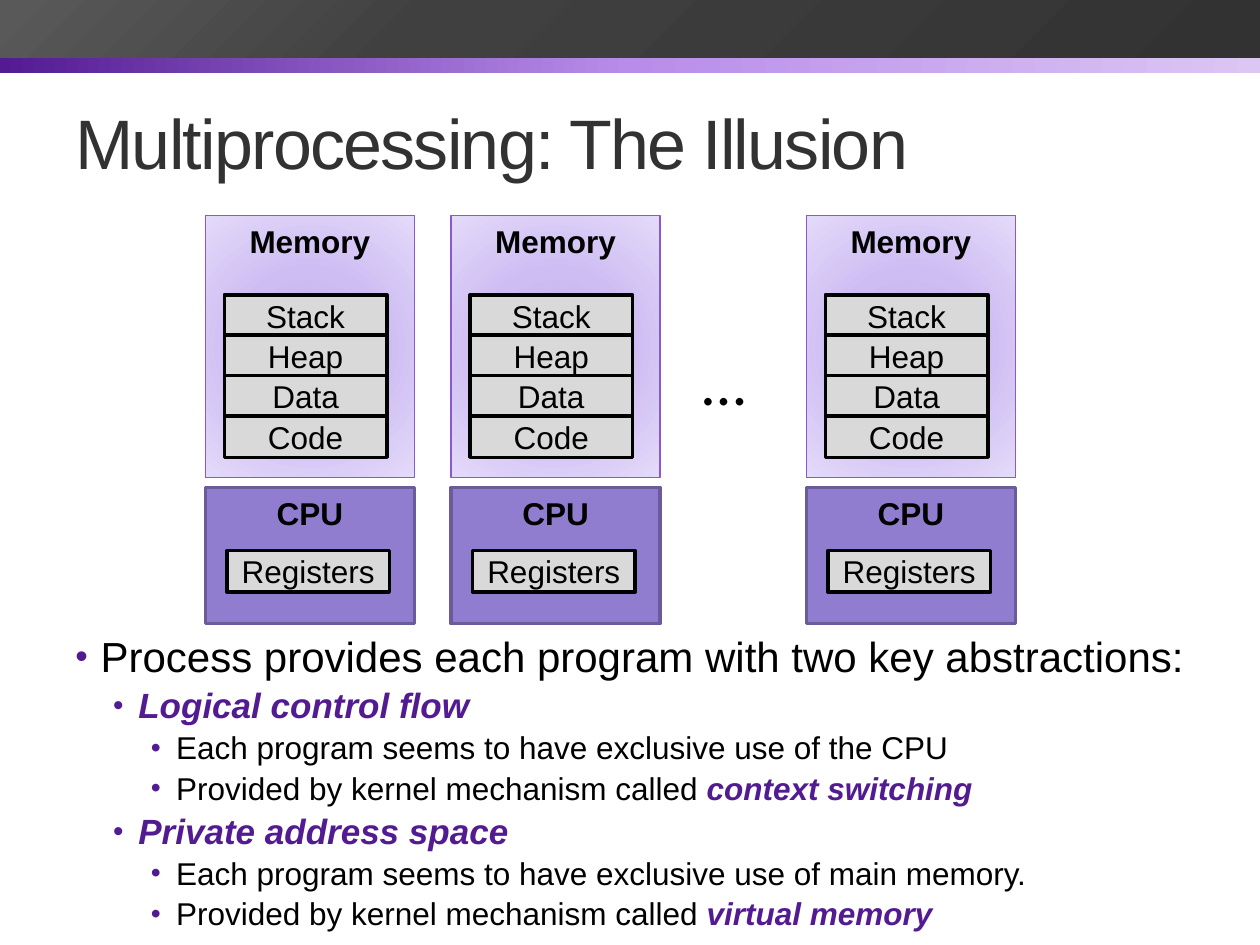
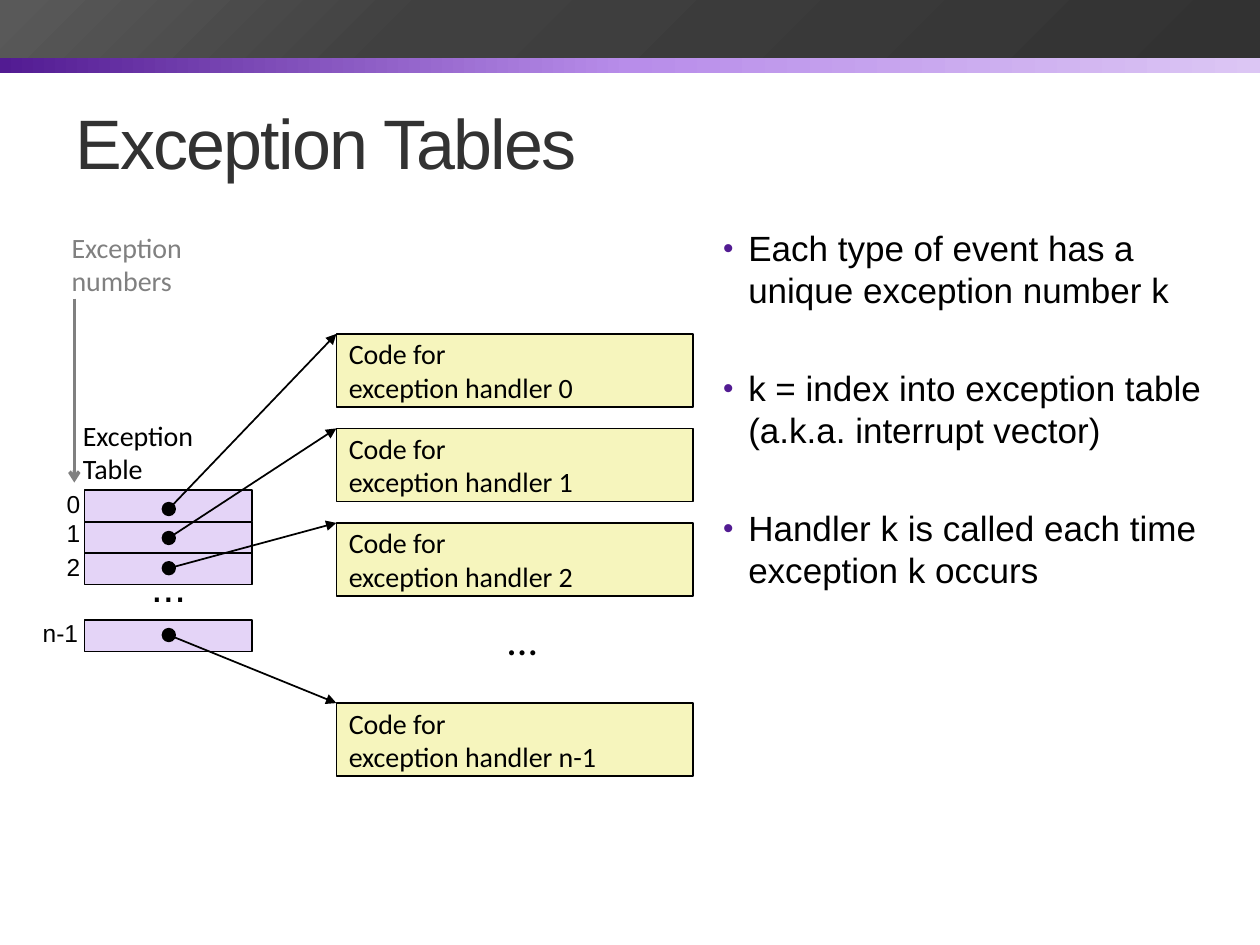
from lxml.etree import SubElement
from pptx import Presentation
from pptx.dml.color import RGBColor
from pptx.enum.shapes import MSO_CONNECTOR, MSO_SHAPE
from pptx.enum.text import MSO_ANCHOR, MSO_AUTO_SIZE, PP_ALIGN
from pptx.oxml import parse_xml
from pptx.oxml.ns import nsdecls, qn
from pptx.util import Inches, Pt

BLACK, PURPLE, TITLE_INK, GREY = "000000", "521B92", "323232", "808080"
CPU_FILL, CPU_EDGE, MEMORY_EDGE = "917DD0", "6B5C99", "8B58D2"
SEGMENT_FILL, ENTRY_FILL, HANDLER_FILL = "D9D9D9", "E4D4F7", "F6F5BD"

STRIPE_STOPS = [(0, PURPLE), (50, "B88DEA"), (100, "DCC6F4")]
BAND_STOPS = [(0, "323232"), (66, "404040"), (99, "595959")]
MEMORY_STOPS = [(0, "BFB0E2"), (45, "CEBDF3"), (100, "E4DAF9")]

# Outline level: indent (in), size (pt), space before (pt), bullet size (%)
LEVELS = [(0.2, 24, 4.8, 85), (0.5, 20, 4, 85), (0.8, 18, 3.6, 90)]

# (level, plain words, emphasised words)
ABSTRACTIONS = [
    (0, "Process provides each program with two key abstractions:", ""),
    (1, "", "Logical control flow"),
    (2, "Each program seems to have exclusive use of the CPU", ""),
    (2, "Provided by kernel mechanism called ", "context switching"),
    (1, "", "Private address space"),
    (2, "Each program seems to have exclusive use of main memory.", ""),
    (2, "Provided by kernel mechanism called ", "virtual memory"),
]
PROCESS_LEFTS = [1.63, 3.58, 6.4]
SEGMENTS = ["Stack", "Heap", "Data", "Code"]

EVENT_NOTES = [
    "Each type of event has a \nunique exception number k",
    "k = index into exception table \n(a.k.a. interrupt vector)",
    "Handler k is called each time \nexception k occurs",
]
# number, its left, top and width, then top of entry, dot and handler
EXCEPTIONS = [
    ("0", 0.43, 3.83, 0.31, 3.89, 3.99, 2.65),
    ("1", 0.43, 4.06, 0.31, 4.14, 4.22, 3.4),
    ("2", 0.43, 4.33, 0.31, 4.39, 4.46, 4.15),
    ("n-1", 0.24, 4.86, 0.48, 4.92, 4.99, 5.58),
]
ENTRY_LEFT, ENTRY_WIDTH, ENTRY_HEIGHT = 0.67, 1.33, 0.25
DOT_LEFT, DOT_SIZE = 1.29, 0.1
HANDLER_LEFT, HANDLER_WIDTH, HANDLER_HEIGHT = 2.67, 2.83, 0.58


def rgb(color):
    return RGBColor.from_string(color)


def box_inches(*lengths):
    return [Inches(length) for length in lengths]


def write(frame, paragraphs, size=18, font="Arial", color=BLACK, bold=False,
          align=PP_ALIGN.LEFT, anchor=MSO_ANCHOR.TOP, wrap=True):
    """Fill a text frame with one paragraph for each string."""
    frame.word_wrap = wrap
    frame.vertical_anchor = anchor
    for index, words in enumerate(paragraphs):
        paragraph = frame.paragraphs[0] if index == 0 else frame.add_paragraph()
        paragraph.alignment = align
        add_run(paragraph, words, size=size, font=font, color=color, bold=bold)


def add_run(paragraph, words, size=18, font="Arial", color=BLACK,
            bold=False, italic=False):
    for index, line in enumerate(words.split("\n")):
        if index:
            paragraph.add_line_break()
        run = paragraph.add_run()
        run.text = line
        run.font.size, run.font.name = Pt(size), font
        run.font.bold, run.font.italic = bold, italic
        run.font.color.rgb = rgb(color)


def add_bullet(paragraph, indent, percent):
    properties = paragraph._p.get_or_add_pPr()
    properties.set("marL", str(Inches(indent)))
    properties.set("indent", str(Inches(-0.2)))
    color = SubElement(properties, qn("a:buClr"))
    SubElement(color, qn("a:srgbClr"), val=PURPLE)
    SubElement(properties, qn("a:buSzPct"), val=str(percent * 1000))
    SubElement(properties, qn("a:buFont"), typeface="Arial")
    SubElement(properties, qn("a:buChar"), char="•")


def add_label(slide, box, paragraphs, grow=True, **style):
    label = slide.shapes.add_textbox(*box_inches(*box))
    write(label.text_frame, paragraphs, **style)
    if grow:
        label.text_frame.auto_size = MSO_AUTO_SIZE.SHAPE_TO_FIT_TEXT
    return label


def add_block(slide, box, fill=None, edge=None, weight=1,
              kind=MSO_SHAPE.RECTANGLE, paragraphs=(), **style):
    block = slide.shapes.add_shape(kind, *box_inches(*box))
    block.shadow.inherit = False
    if fill:
        block.fill.solid()
        block.fill.fore_color.rgb = rgb(fill)
    if edge:
        block.line.color.rgb = rgb(edge)
        block.line.width = Pt(weight)
    else:
        block.line.fill.background()
    if paragraphs:
        write(block.text_frame, paragraphs, **style)
    return block


def fill_gradient(shape, stops, angle=None):
    """Linear at the angle, or circular from the centre without one."""
    direction = (
        '<a:path path="circle"><a:fillToRect l="50000" t="50000" r="50000" b="50000"/></a:path>'
        if angle is None else f'<a:lin ang="{angle * 60000}" scaled="0"/>')
    marks = "".join(f'<a:gs pos="{place * 1000}"><a:srgbClr val="{color}"/></a:gs>'
                    for place, color in stops)
    gradient = parse_xml(f'<a:gradFill {nsdecls("a")} rotWithShape="1">'
                         f'<a:gsLst>{marks}</a:gsLst>{direction}</a:gradFill>')
    shape.fill.background()
    properties = shape._element.spPr
    properties.replace(properties.find(qn("a:noFill")), gradient)


def add_arrow(slide, start, end, color=BLACK, weight=1, head="triangle"):
    arrow = slide.shapes.add_connector(MSO_CONNECTOR.STRAIGHT, *box_inches(*start, *end))
    arrow.line.color.rgb = rgb(color)
    arrow.line.width = Pt(weight)
    SubElement(arrow.line._get_or_add_ln(), qn("a:tailEnd"), type=head)
    SubElement(arrow._element.spPr, qn("a:effectLst"))


def start_slide(deck, title):
    slide = deck.slides.add_slide(deck.slide_layouts[6])
    fill_gradient(add_block(slide, (0, 0.24, 10, 0.34)), STRIPE_STOPS, 0)
    fill_gradient(add_block(slide, (0, 0, 10, 0.46)), BAND_STOPS, 225)
    heading = add_label(slide, (0.5, 0.58, 9, 1.08), [title], grow=False, size=40,
                        color=TITLE_INK, anchor=MSO_ANCHOR.MIDDLE)
    run = heading.text_frame.paragraphs[0].runs[0]
    run._r.get_or_add_rPr().set("spc", "-100")
    return slide


def add_process(slide, left):
    heading = dict(bold=True, align=PP_ALIGN.CENTER)
    part = dict(fill=SEGMENT_FILL, edge=BLACK, weight=2,
                align=PP_ALIGN.CENTER, anchor=MSO_ANCHOR.MIDDLE)
    add_block(slide, (left, 3.87, 1.66, 1.08), CPU_FILL, CPU_EDGE, 2.08,
              paragraphs=["CPU"], **heading)
    add_block(slide, (left + 0.17, 4.37, 1.29, 0.33), paragraphs=["Registers"], **part)
    memory = add_block(slide, (left, 1.71, 1.66, 2.08), edge=MEMORY_EDGE, weight=0.75,
                       paragraphs=["Memory"], **heading)
    fill_gradient(memory, MEMORY_STOPS)
    for row, segment in enumerate(SEGMENTS):
        add_block(slide, (left + 0.15, 2.34 + row * 0.32, 1.29, 0.33),
                  paragraphs=[segment], **part)


def build_illusion(deck):
    slide = start_slide(deck, "Multiprocessing: The Illusion")
    outline = add_label(slide, (0.5, 5, 9, 2.5), [], grow=False).text_frame
    for index, (level, plain, emphasis) in enumerate(ABSTRACTIONS):
        indent, size, before, percent = LEVELS[level]
        paragraph = outline.paragraphs[0] if index == 0 else outline.add_paragraph()
        paragraph.level = level
        paragraph.line_spacing = 0.9
        paragraph.space_before = Pt(before)
        add_bullet(paragraph, indent, percent)
        if plain:
            add_run(paragraph, plain, size=size)
        if emphasis:
            add_run(paragraph, emphasis, size=size, color=PURPLE, bold=True, italic=True)
    for left in PROCESS_LEFTS:
        add_process(slide, left)
    add_label(slide, (5.48, 2.67, 0.62, 0.71), ["…"], size=36, font="Calibri")


def build_exception_tables(deck):
    slide = start_slide(deck, "Exception Tables")
    middle = dict(anchor=MSO_ANCHOR.MIDDLE, wrap=False)
    calibri = dict(font="Calibri", size=16)

    for number, left, top, width, entry_top, dot_top, handler_top in EXCEPTIONS:
        add_block(slide, (ENTRY_LEFT, entry_top, ENTRY_WIDTH, ENTRY_HEIGHT),
                  ENTRY_FILL, BLACK)
        add_label(slide, (left, top, width, 0.33), [number], size=14, **middle)
        add_block(slide, (HANDLER_LEFT, handler_top, HANDLER_WIDTH, HANDLER_HEIGHT),
                  HANDLER_FILL, BLACK, 0.75, anchor=MSO_ANCHOR.MIDDLE,
                  paragraphs=["Code for", f"exception handler {number}"], **calibri)
    for *_, dot_top, handler_top in EXCEPTIONS:
        add_block(slide, (DOT_LEFT, dot_top, DOT_SIZE, DOT_SIZE), BLACK, BLACK,
                  kind=MSO_SHAPE.OVAL)
        add_arrow(slide, (DOT_LEFT + DOT_SIZE / 2, dot_top + DOT_SIZE / 2),
                  (HANDLER_LEFT, handler_top))

    add_label(slide, (1.1, 4.4, 0.48, 0.5), ["..."], size=24, **middle)
    add_label(slide, (3.92, 4.82, 0.45, 0.5), ["..."], size=24, font="Calibri", **middle)
    add_label(slide, (0.56, 3.27, 1.2, 0.64), ["Exception", "Table"], **calibri)
    add_label(slide, (0.47, 1.78, 1.2, 0.64), ["Exception", "numbers"],
              color=GREY, **calibri)
    add_arrow(slide, (0.59, 2.37), (0.59, 3.83), GREY, 2, "arrow")

    notes = add_label(slide, (5.64, 1.75, 4.11, 5.33), EVENT_NOTES, grow=False, size=20)
    for index, paragraph in enumerate(notes.text_frame.paragraphs):
        paragraph.space_before = Pt(32 if index else 4)
        add_bullet(paragraph, 0.2, 85)


def main():
    deck = Presentation()
    deck.slide_width, deck.slide_height = Inches(10), Inches(7.5)
    build_illusion(deck)
    build_exception_tables(deck)
    deck.save("out.pptx")


if __name__ == "__main__":
    main()
